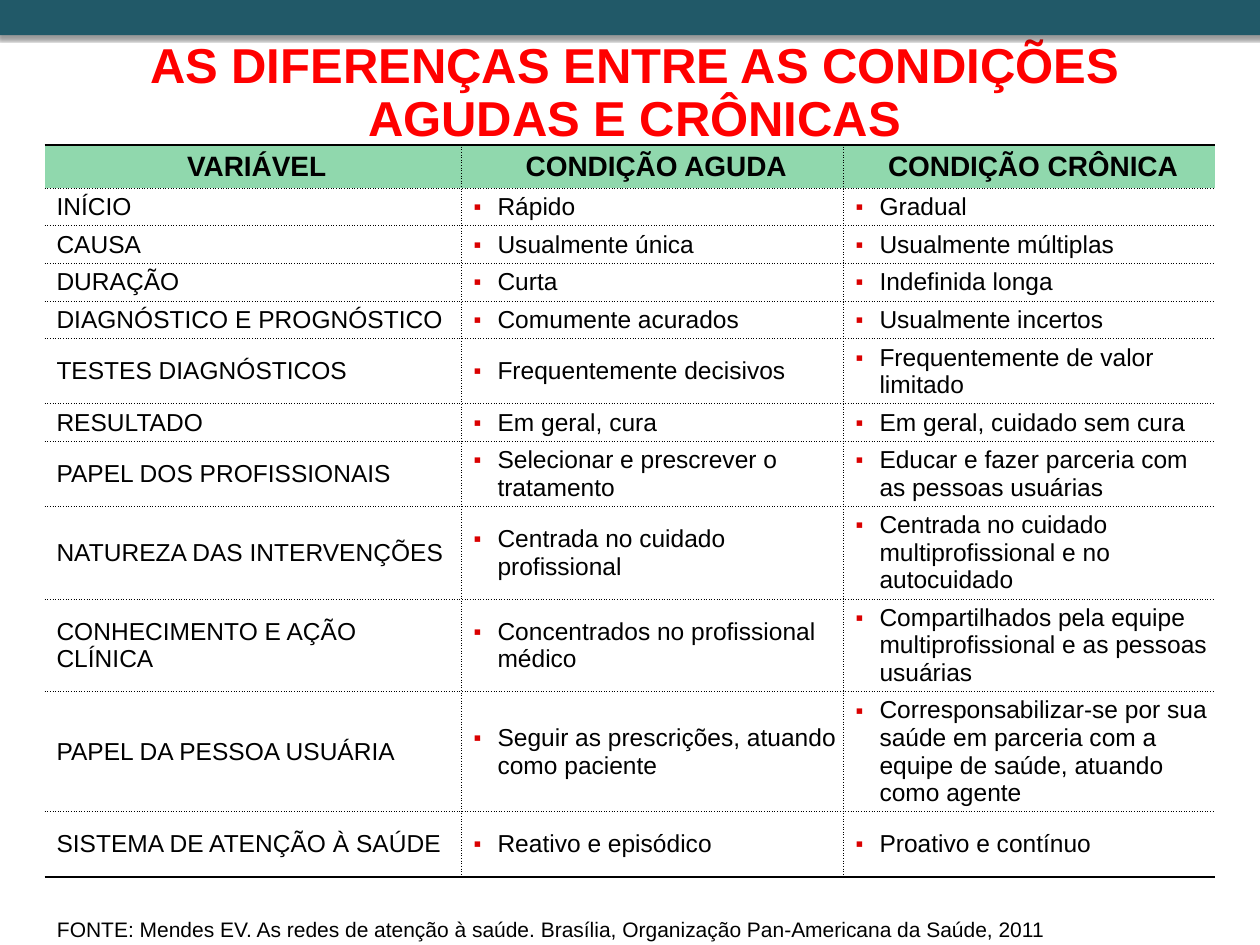
from dataclasses import dataclass

from lxml import etree
from pptx import Presentation
from pptx import util as u
from pptx.dml.color import RGBColor
from pptx.enum import shapes, text
from pptx.oxml.ns import qn


@dataclass(frozen=True)
class Theme:
    """Colours, type sizes and font of the slide."""
    band: str = "215968"
    heading: str = "FF0000"
    header_fill: str = "90D8AD"
    bullet: str = "DA0000"
    ink: str = "000000"
    font: str = "Arial"
    title_size: int = 28
    header_size: int = 16
    body_size: int = 14
    source_size: int = 12


THEME = Theme()
TITLE = "AS DIFERENÇAS ENTRE AS CONDIÇÕES AGUDAS E CRÔNICAS"
SOURCE = ("FONTE: Mendes EV. As redes de atenção à saúde. Brasília, "
          "Organização Pan-Americana da Saúde, 2011")
HEADER = ("VARIÁVEL", "CONDIÇÃO AGUDA", "CONDIÇÃO CRÔNICA")
CONDITIONS = [
    ("INÍCIO", "Rápido", "Gradual"),
    ("CAUSA", "Usualmente única", "Usualmente múltiplas"),
    ("DURAÇÃO", "Curta", "Indefinida longa"),
    ("DIAGNÓSTICO E PROGNÓSTICO", "Comumente acurados", "Usualmente incertos"),
    ("TESTES DIAGNÓSTICOS", "Frequentemente decisivos", "Frequentemente de valor limitado"),
    ("RESULTADO", "Em geral, cura", "Em geral, cuidado sem cura"),
    ("PAPEL DOS PROFISSIONAIS", "Selecionar e prescrever o tratamento",
     "Educar e fazer parceria com as pessoas usuárias"),
    ("NATUREZA DAS INTERVENÇÕES", "Centrada no cuidado profissional",
     "Centrada no cuidado multiprofissional e no autocuidado"),
    ("CONHECIMENTO E AÇÃO CLÍNICA", "Concentrados no profissional médico",
     "Compartilhados pela equipe multiprofissional e as pessoas usuárias"),
    ("PAPEL DA PESSOA USUÁRIA", "Seguir as prescrições, atuando como paciente",
     "Corresponsabilizar-se por sua saúde em parceria com a equipe de saúde, "
     "atuando como agente"),
    ("SISTEMA DE ATENÇÃO À SAÚDE", "Reativo e episódico", "Proativo e contínuo"),
]
ROW_LINES = (1, 1, 1, 1, 2, 1, 2, 3, 3, 4, 2)
COLUMN_WIDTHS = (8.41, 7.7, 7.49)
HEADER_HEIGHT, ONE_LINE_ROW, EXTRA_LINE = 0.87, 0.76, 0.55


def cm_box(*lengths):
    """Turn left, top, width and height in centimetres into lengths."""
    return [u.Cm(length) for length in lengths]


def add_node(parent, tag, **attributes):
    """Append an XML child with the given attributes."""
    node = etree.SubElement(parent, qn(tag))
    for key, value in attributes.items():
        node.set(key, str(value))
    return node


def style_text(paragraph, size, color, bold=False):
    """Format every run of a paragraph."""
    for run in paragraph.runs:
        run.font.name = THEME.font
        run.font.size = u.Pt(size)
        run.font.bold = bold
        run.font.color.rgb = RGBColor.from_string(color)


def set_hanging(paragraph, indent):
    """Give a paragraph a hanging indent in centimetres."""
    properties = paragraph._p.get_or_add_pPr()
    properties.set("marL", str(u.Cm(indent)))
    properties.set("indent", str(-u.Cm(indent)))
    return properties


def set_bullet(paragraph):
    """Put a small square bullet before a paragraph."""
    properties = set_hanging(paragraph, 0.48)
    add_node(add_node(properties, "a:buClr"), "a:srgbClr", val=THEME.bullet)
    add_node(properties, "a:buSzPct", val=90000)
    add_node(properties, "a:buFont", typeface=THEME.font)
    add_node(properties, "a:buChar", char="▪")


def set_borders(cell, row, column, last_row, last_column):
    """Draw dotted inner rules and solid rules above and below the table."""
    properties = cell._tc.get_or_add_tcPr()
    outer = {"a:lnL": column == 0, "a:lnR": column == last_column,
             "a:lnT": row == 0, "a:lnB": row == last_row}
    for side, is_outer in outer.items():
        solid = is_outer and side in ("a:lnT", "a:lnB")
        rule = add_node(properties, side, w=u.Pt(1 if solid else 0.5))
        if is_outer and not solid:
            add_node(rule, "a:noFill")
            continue
        add_node(add_node(rule, "a:solidFill"), "a:srgbClr", val=THEME.ink)
        add_node(rule, "a:prstDash", val="solid" if solid else "sysDot")


def add_band(slide, box):
    """Draw the top band with its soft shadow."""
    band = slide.shapes.add_shape(shapes.MSO_SHAPE.RECTANGLE, *box)
    band.fill.solid()
    band.fill.fore_color.rgb = RGBColor.from_string(THEME.band)
    band.line.fill.background()
    band.shadow.inherit = False
    effects = band._element.spPr.find(qn("a:effectLst"))
    shadow = add_node(effects, "a:outerShdw", blurRad=u.Pt(2), dist=u.Pt(2),
                      dir=5400000, algn="t", rotWithShape=0)
    add_node(add_node(shadow, "a:srgbClr", val=THEME.ink), "a:alpha", val=40000)


def add_title(slide, box):
    """Place and format the title."""
    title = slide.shapes.title
    title.left, title.top, title.width, title.height = box
    frame = title.text_frame
    frame.text = TITLE
    frame.word_wrap = True
    frame.auto_size = text.MSO_AUTO_SIZE.NONE
    frame.vertical_anchor = text.MSO_ANCHOR.MIDDLE
    frame.margin_left = frame.margin_right = u.Cm(0.23)
    frame.margin_top = frame.margin_bottom = u.Cm(0.1)
    paragraph = frame.paragraphs[0]
    paragraph.alignment = text.PP_ALIGN.CENTER
    paragraph.line_spacing = 0.9
    style_text(paragraph, THEME.title_size, THEME.heading, bold=True)


def fill_cell(cell, wording, row, column):
    """Write one table cell and format it as header, label or bullet."""
    cell.text_frame.text = wording
    cell.vertical_anchor = text.MSO_ANCHOR.MIDDLE
    cell.margin_left = u.Cm(0.24)
    cell.margin_right = cell.margin_top = cell.margin_bottom = u.Cm(0.1)
    set_borders(cell, row, column, len(CONDITIONS), len(HEADER) - 1)
    paragraph = cell.text_frame.paragraphs[0]
    if row == 0:
        cell.fill.solid()
        cell.fill.fore_color.rgb = RGBColor.from_string(THEME.header_fill)
        paragraph.alignment = text.PP_ALIGN.CENTER
        set_hanging(paragraph, 0.97)
        style_text(paragraph, THEME.header_size, THEME.ink, bold=True)
        return
    cell.fill.background()
    if column > 0:
        set_bullet(paragraph)
    style_text(paragraph, THEME.body_size, THEME.ink)


def add_comparison(slide, left, top):
    """Build the table that compares acute and chronic conditions."""
    heights = [HEADER_HEIGHT] + [ONE_LINE_ROW + EXTRA_LINE * (lines - 1) for lines in ROW_LINES]
    box = cm_box(left, top, sum(COLUMN_WIDTHS), sum(heights))
    table = slide.shapes.add_table(len(heights), len(HEADER), *box).table
    table.horz_banding = False
    for column, width in zip(table.columns, COLUMN_WIDTHS):
        column.width = u.Cm(width)
    for row, (wordings, height) in enumerate(zip([HEADER] + CONDITIONS, heights)):
        table.rows[row].height = u.Cm(height)
        for column, wording in enumerate(wordings):
            fill_cell(table.cell(row, column), wording, row, column)


def add_source(slide, box):
    """Write the source line under the table."""
    frame = slide.shapes.add_textbox(*box).text_frame
    frame.text = SOURCE
    frame.word_wrap = True
    style_text(frame.paragraphs[0], THEME.source_size, THEME.ink)


def main():
    """Build and save the slide."""
    deck = Presentation()
    deck.slide_width, deck.slide_height = u.Cm(25.4), u.Cm(19.05)
    slide = deck.slides.add_slide(deck.slide_layouts[5])
    add_band(slide, cm_box(-0.05, 0, 25.5, 0.71))
    add_comparison(slide, 0.9, 2.92)
    add_title(slide, cm_box(1.09, 0.79, 23.4, 2.2))
    add_source(slide, cm_box(0.9, 18.36, 23.4, 0.69))
    deck.save("out.pptx")


if __name__ == "__main__":
    main()
